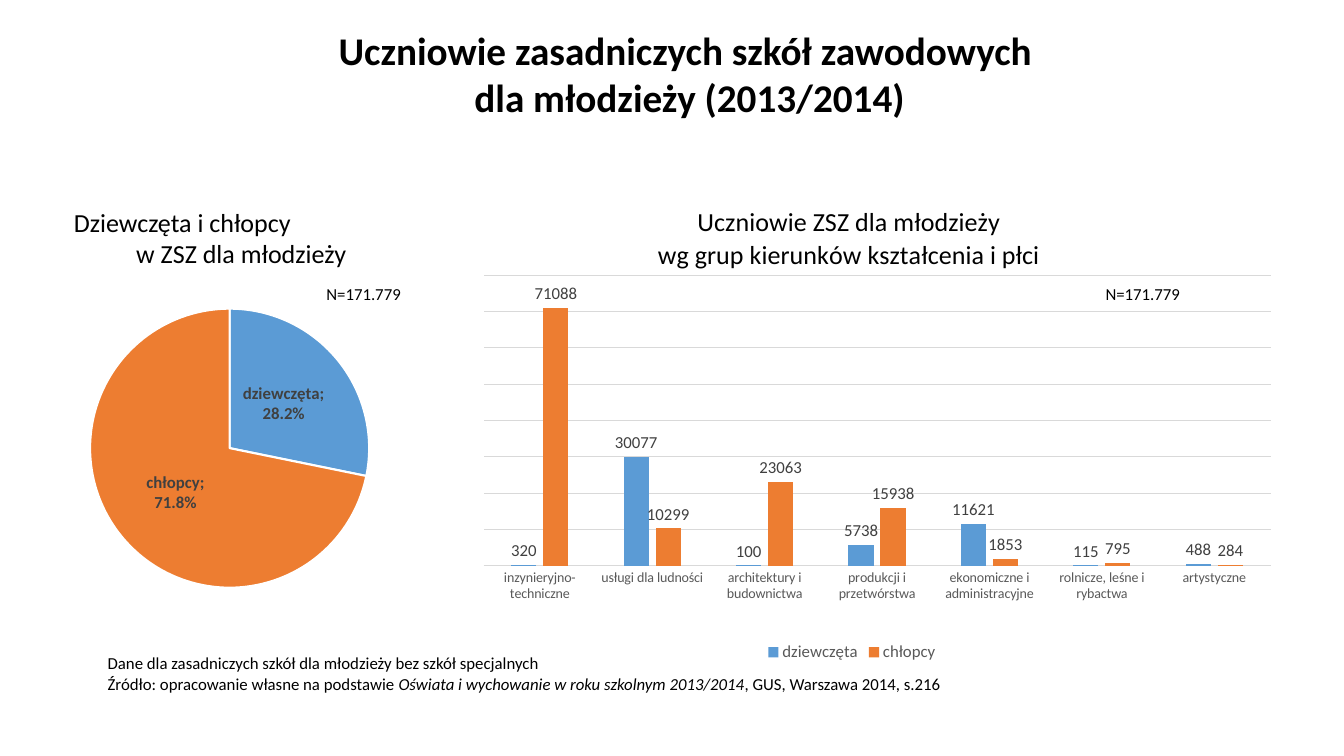
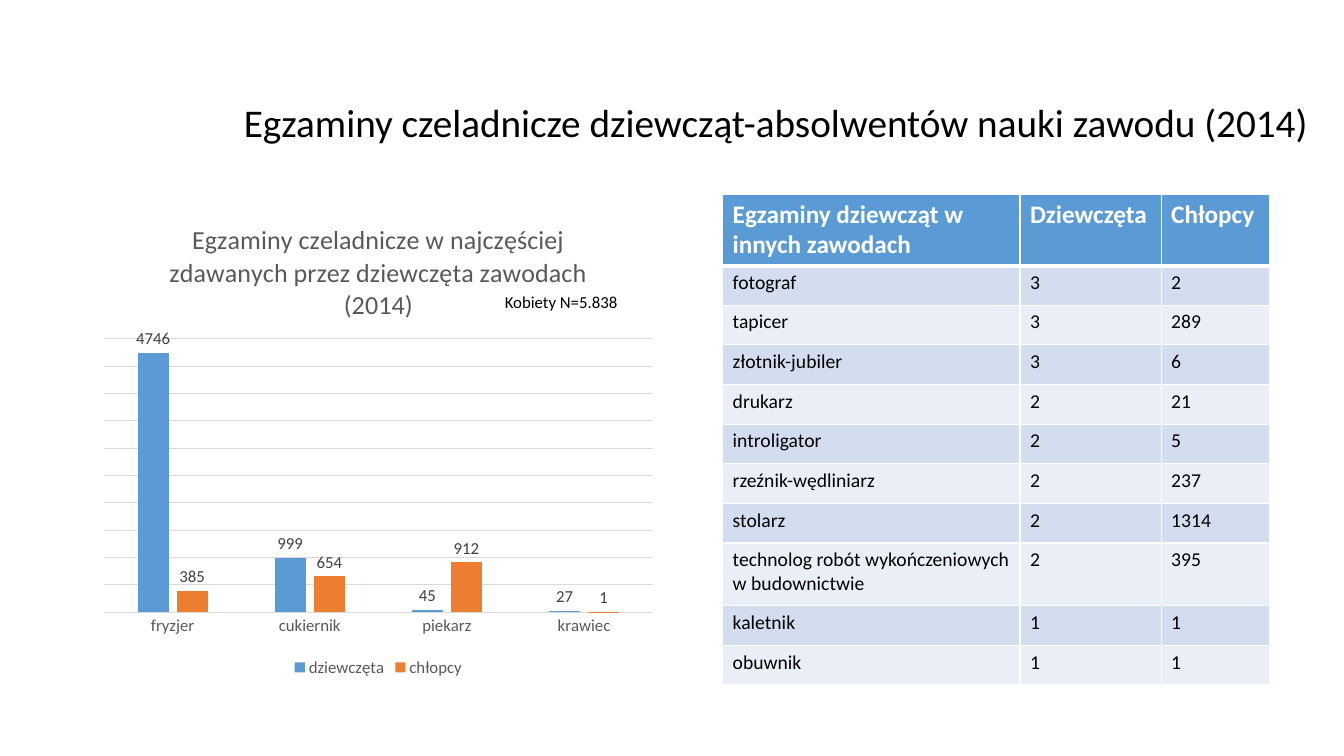
from dataclasses import dataclass

from pptx import Presentation
from pptx.chart.data import CategoryChartData
from pptx.dml.color import RGBColor
from pptx.enum import chart as charts, text
from pptx.oxml import parse_xml
from pptx.oxml.ns import nsdecls, qn
from pptx.util import Pt


@dataclass(frozen=True)
class Theme:
    font: str = "Calibri"
    black: str = "000000"
    white: str = "FFFFFF"
    gray: str = "595959"
    label: str = "404040"
    grid: str = "D9D9D9"
    girls: str = "5B9BD5"
    boys: str = "ED7D31"
    bands: tuple = ("D2DEEF", "EAEFF7")
    title_size: float = 28
    chart_title_size: float = 18.6
    header_size: float = 18
    cell_size: float = 14
    note_size: float = 12
    small_size: float = 10


THEME = Theme()
GENDERS = (("dziewczęta", THEME.girls), ("chłopcy", THEME.boys))


def rgb(color):
    return RGBColor.from_string(color)


def style_font(font, size, color=THEME.black, bold=False, italic=False):
    font.name = THEME.font
    font.size = Pt(size)
    font.color.rgb = rgb(color)
    font.bold = bold
    font.italic = italic


def write_paragraphs(frame, paragraphs, size, color=THEME.black, bold=False, alignments=()):
    """Each paragraph is a list of (text, italic) runs or one plain string."""
    for index, runs in enumerate(paragraphs):
        paragraph = frame.paragraphs[0] if index == 0 else frame.add_paragraph()
        if alignments:
            paragraph.alignment = alignments[index]
        for words, italic in [(runs, False)] if isinstance(runs, str) else runs:
            run = paragraph.add_run()
            run.text = words
            style_font(run.font, size, color, bold, italic)


def add_titled_slide(presentation, lines, box, alignment, bold=False):
    slide = presentation.slides.add_slide(presentation.slide_layouts[5])
    title = slide.shapes.title
    title.left, title.top, title.width, title.height = map(Pt, box)
    frame = title.text_frame
    frame.vertical_anchor = text.MSO_ANCHOR.MIDDLE
    frame.auto_size = text.MSO_AUTO_SIZE.NONE
    write_paragraphs(frame, lines, THEME.title_size, bold=bold, alignments=[alignment] * len(lines))
    return slide


def add_text(slide, box, paragraphs, size=THEME.note_size, wrap=False, alignments=()):
    frame = slide.shapes.add_textbox(*map(Pt, box)).text_frame
    frame.word_wrap = wrap
    write_paragraphs(frame, paragraphs, size, alignments=alignments)


def place_plot(chart, x, y, width, height):
    """Fix the inner plot area, in fractions of the chart."""
    plot_area = chart.element.find(".//" + qn("c:plotArea"))
    for layout in plot_area.findall(qn("c:layout")):
        plot_area.remove(layout)
    values = zip("xywh", (x, y, width, height))
    sizes = "".join(f'<c:{name} val="{value}"/>' for name, value in values)
    plot_area.insert(0, parse_xml(
        f'<c:layout {nsdecls("c")}><c:manualLayout><c:layoutTarget val="inner"/>'
        f'<c:xMode val="edge"/><c:yMode val="edge"/>{sizes}</c:manualLayout></c:layout>'))


def add_chart(slide, kind, box, plot, categories, series):
    data = CategoryChartData()
    data.categories = categories
    for name, values in series:
        data.add_series(name, values)
    chart = slide.shapes.add_chart(kind, *map(Pt, box), data).chart
    style_font(chart.font, THEME.small_size)
    place_plot(chart, *plot)
    chart.has_title = False
    chart.has_legend = False
    return chart


def style_labels(labels, position, bold=False):
    labels.show_value = True
    labels.position = position
    style_font(labels.font, THEME.note_size, THEME.label, bold)


def fill_solid(fill, color):
    fill.solid()
    fill.fore_color.rgb = rgb(color)


def add_column_chart(slide, box, plot, categories, counts, title, title_color,
                     category_size, maximum, step):
    series = [(name, values) for (name, _), values in zip(GENDERS, counts)]
    chart = add_chart(slide, charts.XL_CHART_TYPE.COLUMN_CLUSTERED, box, plot, categories, series)
    chart.has_title = True
    write_paragraphs(chart.chart_title.text_frame, title, THEME.chart_title_size, title_color)
    chart.chart_title.include_in_layout = False
    chart.has_legend = True
    chart.legend.position = charts.XL_LEGEND_POSITION.BOTTOM
    chart.legend.include_in_layout = False
    style_font(chart.legend.font, THEME.note_size, THEME.gray)

    category_axis, value_axis = chart.category_axis, chart.value_axis
    category_axis.major_tick_mark = charts.XL_TICK_MARK.NONE
    style_font(category_axis.tick_labels.font, category_size, THEME.gray)
    value_axis.visible = False
    value_axis.minimum_scale = 0
    value_axis.maximum_scale = maximum
    value_axis.major_unit = step
    for line in (category_axis.format.line, value_axis.major_gridlines.format.line):
        line.color.rgb = rgb(THEME.grid)
        line.width = Pt(0.75)

    columns = chart.plots[0]
    columns.vary_by_categories = False
    columns.gap_width = 219
    columns.overlap = -27
    for column, (_, color) in zip(columns.series, GENDERS):
        fill_solid(column.format.fill, color)
        style_labels(column.data_labels, charts.XL_LABEL_POSITION.OUTSIDE_END)


def add_pie_chart(slide, box, plot, shares):
    names = [name for name, _ in GENDERS]
    chart = add_chart(slide, charts.XL_CHART_TYPE.PIE, box, plot, names, [("Uczniowie", shares)])
    pie = chart.plots[0].series[0]
    for index, (_, color) in enumerate(GENDERS):
        slice_format = pie.points[index].format
        fill_solid(slice_format.fill, color)
        slice_format.line.color.rgb = rgb(THEME.white)
        slice_format.line.width = Pt(1.5)
    labels = pie.data_labels
    style_labels(labels, charts.XL_LABEL_POSITION.CENTER, bold=True)
    labels.show_category_name = True
    labels.number_format = "0.0%"
    labels.number_format_is_linked = False
    group = chart.element.find(".//" + qn("c:dLbls"))
    group.find(qn("c:showBubbleSize")).addnext(
        parse_xml(f'<c:separator {nsdecls("c")}>;\n</c:separator>'))


def set_borders(cell, bottom):
    properties = cell._tc.get_or_add_tcPr()
    for index, (side, width) in enumerate((("L", 1), ("R", 1), ("T", 1), ("B", bottom))):
        properties.insert(index, parse_xml(
            f'<a:ln{side} {nsdecls("a")} w="{Pt(width)}"><a:solidFill>'
            f'<a:srgbClr val="{THEME.white}"/></a:solidFill></a:ln{side}>'))


def add_table(slide, left, top, widths, heights, rows):
    box = (left, top, sum(widths), sum(heights))
    table = slide.shapes.add_table(len(rows), len(widths), *map(Pt, box)).table
    for column, width in zip(table.columns, widths):
        column.width = Pt(width)
    for row_index, (values, height) in enumerate(zip(rows, heights)):
        header = row_index == 0
        table.rows[row_index].height = Pt(height)
        fill = THEME.girls if header else THEME.bands[(row_index - 1) % 2]
        size = THEME.header_size if header else THEME.cell_size
        color = THEME.white if header else THEME.black
        for column_index, value in enumerate(values):
            cell = table.cell(row_index, column_index)
            fill_solid(cell.fill, fill)
            set_borders(cell, 3 if header or False else 1)
            write_paragraphs(cell.text_frame, [str(value)], size, color, header)


def build_students_slide(presentation):
    slide = add_titled_slide(
        presentation,
        ["Uczniowie zasadniczych szkół zawodowych ", "dla młodzieży (2013/2014)"],
        (78.5, 0, 828, 104.4), text.PP_ALIGN.CENTER, bold=True)
    categories = [
        "inzynieryjno- techniczne", "usługi dla ludności", "architektury i budownictwa",
        "produkcji i przetwórstwa", "ekonomiczne i administracyjne",
        "rolnicze, leśne i rybactwa", "artystyczne"]
    counts = [(320, 30077, 100, 5738, 11621, 115, 488),
              (71088, 10299, 23063, 15938, 1853, 795, 284)]
    add_column_chart(
        slide, (309.6, 133.2, 598.3, 342.7), (0.06, 0.185, 0.94, 0.606), categories, counts,
        ["Uczniowie ZSZ dla młodzieży ", "wg grup kierunków kształcenia i płci "],
        THEME.black, THEME.small_size, 80000, 10000)
    add_pie_chart(slide, (10.8, 133.9, 322.6, 308.9), (0.166, 0.28, 0.618, 0.646), (0.282, 0.718))
    add_text(slide, (45.7, 143.6, 208.8, 54), ["Dziewczęta i chłopcy", "w ZSZ dla młodzieży"],
             THEME.chart_title_size, True, (text.PP_ALIGN.LEFT, text.PP_ALIGN.RIGHT))
    for left in (226, 782.6):
        add_text(slide, (left, 199.4, 68.4, 21.6), ["N=171.779"])
    add_text(slide, (69.8, 463, 614, 36), [
        "Dane dla zasadniczych szkół dla młodzieży bez szkół specjalnych",
        [("Źródło: opracowanie własne na podstawie ", False),
         ("Oświata i wychowanie w roku szkolnym 2013/2014", True),
         (", GUS, Warszawa 2014, s.216", False)]])


def build_exams_slide(presentation):
    slide = add_titled_slide(
        presentation, ["Egzaminy czeladnicze dziewcząt-absolwentów nauki zawodu (2014)"],
        (167, 34.6, 792, 104.4), text.PP_ALIGN.LEFT)
    add_column_chart(
        slide, (66.2, 144, 408.2, 342.7), (0.02, 0.286, 0.96, 0.57),
        ["fryzjer", "cukiernik", "piekarz", "krawiec"],
        [(4746, 999, 45, 27), (385, 654, 912, 1)],
        ["Egzaminy czeladnicze w najczęściej zdawanych przez dziewczęta zawodach (2014)"],
        THEME.gray, THEME.note_size, 5000, 500)
    rows = [
        ("Egzaminy dziewcząt w innych zawodach", "Dziewczęta", "Chłopcy"),
        ("fotograf", 3, 2),
        ("tapicer", 3, 289),
        ("złotnik-jubiler", 3, 6),
        ("drukarz", 2, 21),
        ("introligator", 2, 5),
        ("rzeźnik-wędliniarz", 2, 237),
        ("stolarz", 2, 1314),
        ("technolog robót wykończeniowych w budownictwie", 2, 395),
        ("kaletnik", 1, 1),
        ("obuwnik", 1, 1)]
    heights = [50.4] + [28.3] * 7 + [44.9] + [28.3] * 2
    add_table(slide, 516.2, 138.6, (212.4, 100.8, 77.8), heights, rows)
    add_text(slide, (353.5, 205.2, 95.8, 21.6), ["Kobiety N=5.838"])


def main():
    presentation = Presentation()
    presentation.slide_width = Pt(960)
    presentation.slide_height = Pt(540)
    build_students_slide(presentation)
    build_exams_slide(presentation)
    presentation.save("out.pptx")


if __name__ == "__main__":
    main()
